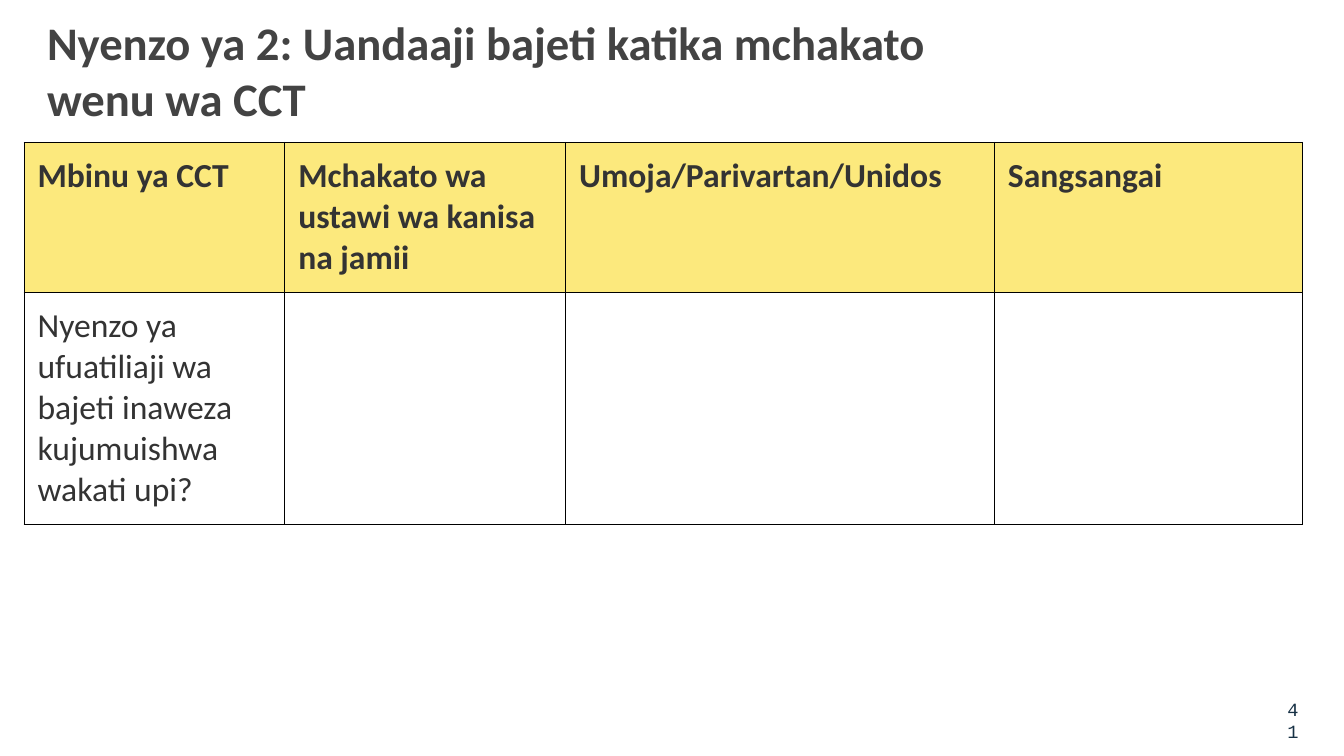
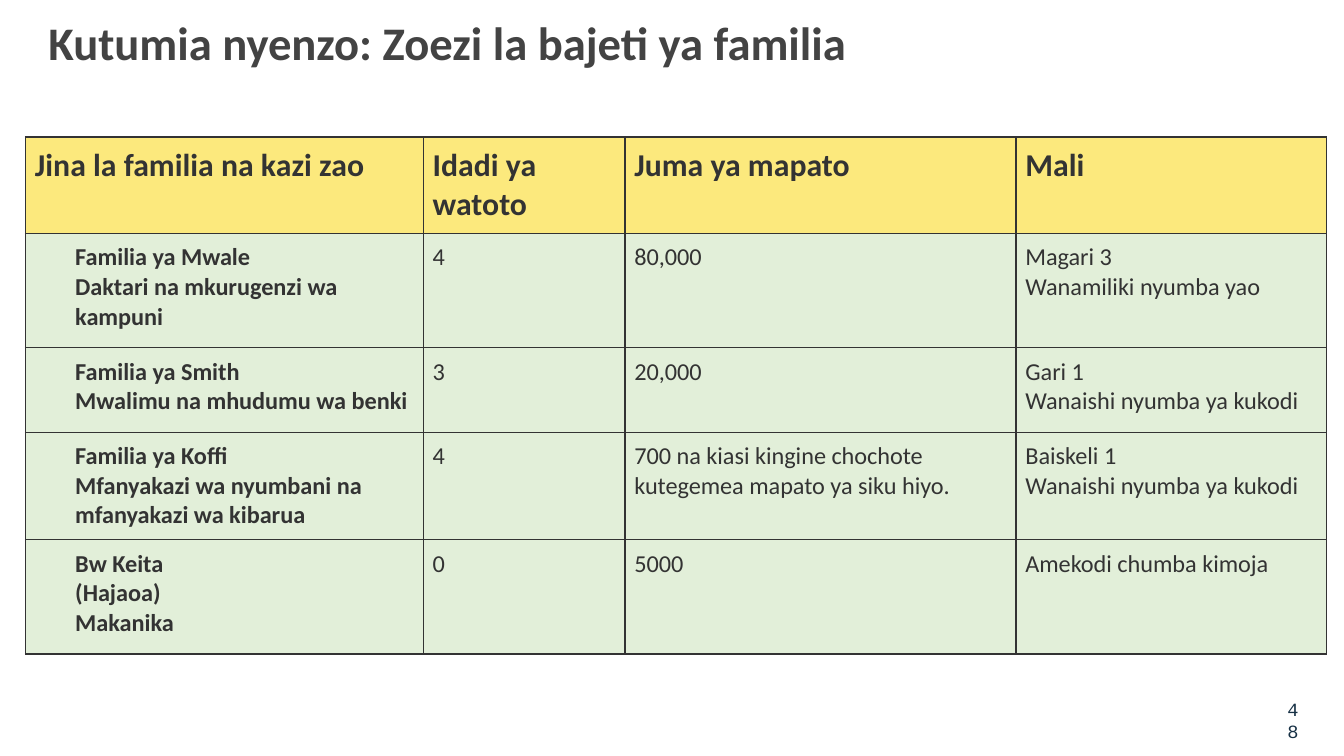
"""Build two budgeting slides, each with a title, a table and a page number."""
from lxml.etree import SubElement
from pptx import Presentation
from pptx.dml.color import RGBColor
from pptx.enum.text import MSO_ANCHOR, MSO_AUTO_SIZE, PP_ALIGN
from pptx.oxml.ns import qn
from pptx.util import Inches, Pt

HEADER_FILL = "FCE97D"
TITLE_COLOR = "434343"
TEXT_COLOR = "333333"
NUMBER_COLOR = "173145"

PAGES = [
    {
        "title": "Nyenzo ya 2: Uandaaji bajeti katika mchakato wenu wa CCT",
        "title_left": 0.25, "title_width": 6.81, "number": "41",
        "left": 0.18, "top": 1.06, "inset": 0.1, "border": "000000",
        "columns": [1.94, 2.09, 3.19, 2.29], "heights": [0.73, 1.12],
        "body_fill": "FFFFFF", "header_size": 18, "body_size": 18,
        "lead_bold": False, "lead_indent": 0,
        "rows": [
            ["Mbinu ya CCT", "Mchakato wa ustawi wa kanisa na jamii",
             "Umoja/Parivartan/Unidos", "Sangsangai"],
            ["Nyenzo ya ufuatiliaji wa bajeti inaweza kujumuishwa wakati upi?",
             "", "", ""],
        ],
    },
    {
        "title": "Kutumia nyenzo: Zoezi la bajeti ya familia",
        "title_left": 0.26, "title_width": 6.34, "number": "48",
        "left": 0.19, "top": 1.02, "inset": 0.07, "border": "333333",
        "columns": [2.96, 1.5, 2.91, 2.31],
        "heights": [0.63, 0.85, 0.63, 0.63, 0.85],
        "body_fill": "E2EFD9", "header_size": 17, "body_size": 13,
        "lead_bold": True, "lead_indent": 0.3,
        "rows": [
            ["Jina la familia na kazi zao", "Idadi ya watoto",
             "Juma ya mapato", "Mali"],
            ["Familia ya Mwale\vDaktari na mkurugenzi wa kampuni", "4",
             "80,000", "Magari 3\nWanamiliki nyumba yao"],
            ["Familia ya Smith\vMwalimu na mhudumu wa benki", "3",
             "20,000", "Gari 1\nWanaishi nyumba ya kukodi"],
            ["Familia ya Koffi\vMfanyakazi wa nyumbani na mfanyakazi wa kibarua",
             "4", "700 na kiasi kingine chochote kutegemea mapato ya siku hiyo.",
             "Baiskeli 1\nWanaishi nyumba ya kukodi"],
            ["Bw Keita\v(Hajaoa)\vMakanika", "0", "5000",
             "Amekodi chumba kimoja"],
        ],
    },
]


def write(frame, text, size, color, bold=False, font="Calibri",
          align=PP_ALIGN.LEFT, indent=0):
    """Write paragraphs split by newlines, with line breaks at vertical tabs."""
    frame.word_wrap = True
    for index, content in enumerate(text.split("\n")):
        para = frame.add_paragraph() if index else frame.paragraphs[0]
        para.alignment = align
        if indent:
            properties = para._p.get_or_add_pPr()
            properties.set("marL", str(Inches(indent)))
            properties.set("indent", "0")
        for position, line in enumerate(content.split("\v")):
            if position:
                para.add_line_break()
            span = para.add_run()
            span.text = line
            span.font.name = font
            span.font.size = Pt(size)
            span.font.bold = bold
            span.font.color.rgb = RGBColor.from_string(color)


def style_cell(cell, fill, border, inset):
    """Set the margins, the four borders and the fill of a cell."""
    cell.margin_left = cell.margin_right = Inches(inset)
    cell.margin_top = cell.margin_bottom = Inches(inset)
    properties = cell._tc.get_or_add_tcPr()
    for side in ("a:lnL", "a:lnR", "a:lnT", "a:lnB"):
        edge = SubElement(properties, qn(side), w=str(Pt(0.75)))
        SubElement(SubElement(edge, qn("a:solidFill")), qn("a:srgbClr"), val=border)
    cell.fill.solid()
    cell.fill.fore_color.rgb = RGBColor.from_string(fill)


deck = Presentation()
deck.slide_width = Inches(10)
deck.slide_height = Inches(10) * 9 // 16

for content in PAGES:
    page = deck.slides.add_slide(deck.slide_layouts[5])

    title = page.shapes.title
    title.left, title.top = Inches(content["title_left"]), Inches(0)
    title.width, title.height = Inches(content["title_width"]), Inches(0.63)
    number = page.shapes.add_textbox(
        Inches(9.41), Inches(5.09), Inches(0.35), Inches(0.3))
    for box in (title, number):
        frame = box.text_frame
        frame.margin_left = frame.margin_right = Inches(0.1)
        frame.margin_top = frame.margin_bottom = Inches(0.1)
        frame.vertical_anchor = MSO_ANCHOR.TOP
        frame.auto_size = MSO_AUTO_SIZE.NONE
    write(title.text_frame, content["title"], 25, TITLE_COLOR, bold=True)
    write(number.text_frame, content["number"], 10, NUMBER_COLOR,
          font="Courier New", align=PP_ALIGN.RIGHT)

    rows, columns = content["rows"], content["columns"]
    table = page.shapes.add_table(
        len(rows), len(columns), Inches(content["left"]), Inches(content["top"]),
        Inches(sum(columns)), Inches(sum(content["heights"]))).table
    table.horz_banding = False
    for column, width in zip(table.columns, columns):
        column.width = Inches(width)
    for row, height in zip(table.rows, content["heights"]):
        row.height = Inches(height)

    for row_index, texts in enumerate(rows):
        header = row_index == 0
        for column_index, text in enumerate(texts):
            cell = table.cell(row_index, column_index)
            style_cell(cell, HEADER_FILL if header else content["body_fill"],
                       content["border"], content["inset"])
            lead = column_index == 0 and not header
            if text:
                write(cell.text_frame, text,
                      content["header_size" if header else "body_size"],
                      TEXT_COLOR, bold=header or (lead and content["lead_bold"]),
                      indent=content["lead_indent"] if lead else 0)

deck.save("out.pptx")
